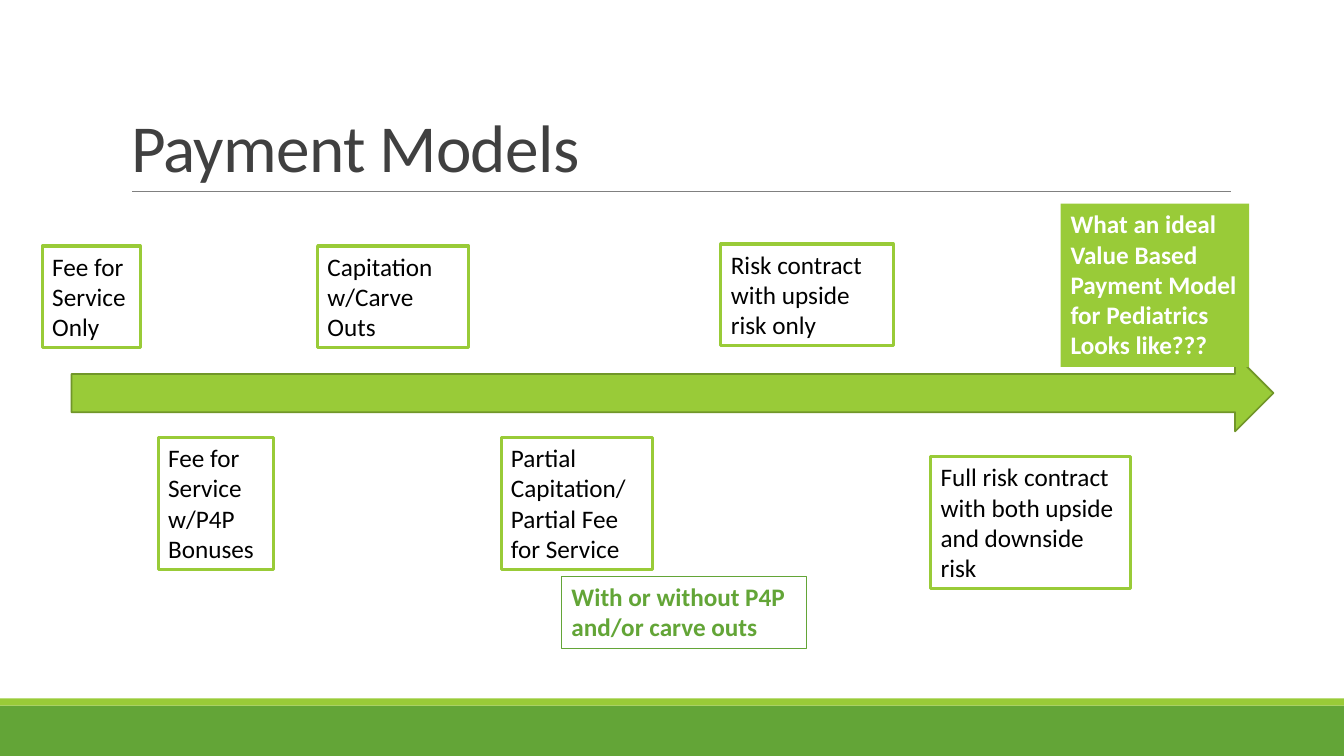
from dataclasses import dataclass

from lxml import etree
from pptx import Presentation
from pptx.dml.color import RGBColor
from pptx.enum.shapes import MSO_CONNECTOR, MSO_SHAPE
from pptx.enum.text import MSO_ANCHOR, MSO_AUTO_SIZE, PP_ALIGN
from pptx.oxml.ns import qn
from pptx.util import Inches, Pt

RECT, ARROW = MSO_SHAPE.RECTANGLE, MSO_SHAPE.RIGHT_ARROW
STRAIGHT = MSO_CONNECTOR.STRAIGHT
TOP, BOTTOM = MSO_ANCHOR.TOP, MSO_ANCHOR.BOTTOM
LEFT = PP_ALIGN.LEFT
GROW, NO_FIT = MSO_AUTO_SIZE.SHAPE_TO_FIT_TEXT, MSO_AUTO_SIZE.NONE

FONT = "Calibri"
COLORS = {
    "lime": "99CB38",
    "green": "63A537",
    "olive": "719629",
    "gray": "808080",
    "title": "404040",
    "black": "000000",
    "white": "FFFFFF",
}


@dataclass
class Box:
    left: float
    top: float
    width: float
    height: float
    fill: str | None = None
    line: str | None = None
    line_width: float = 2.25


@dataclass
class Model:
    box: Box
    text: str
    color: str = "black"
    bold: bool = False


def rgb(name: str) -> RGBColor:
    return RGBColor.from_string(COLORS[name])


def add_box(slide, box: Box, kind=RECT):
    shape = slide.shapes.add_shape(
        kind, Inches(box.left), Inches(box.top), Inches(box.width), Inches(box.height))
    shape.shadow.inherit = False
    if box.fill:
        shape.fill.solid()
        shape.fill.fore_color.rgb = rgb(box.fill)
    else:
        shape.fill.background()
    if box.line:
        shape.line.color.rgb = rgb(box.line)
        shape.line.width = Pt(box.line_width)
    else:
        shape.line.fill.background()
    return shape


def format_text(frame, size: float, color: str, bold: bool = False) -> None:
    for paragraph in frame.paragraphs:
        paragraph.alignment = LEFT
        for run in paragraph.runs:
            run.font.name = FONT
            run.font.size = Pt(size)
            run.font.bold = bold
            run.font.color.rgb = rgb(color)


def add_model(slide, model: Model) -> None:
    frame = add_box(slide, model.box).text_frame
    frame.text = model.text
    frame.word_wrap = True
    frame.auto_size = GROW
    frame.vertical_anchor = TOP
    format_text(frame, 18, model.color, model.bold)


def add_title(slide, text: str) -> None:
    title = slide.shapes.title
    title.left, title.top = Inches(1.2), Inches(0.31)
    title.width, title.height = Inches(11), Inches(1.59)
    frame = title.text_frame
    frame.text = text
    frame.word_wrap = True
    frame.auto_size = NO_FIT
    frame.vertical_anchor = BOTTOM
    format_text(frame, 48, "title")
    heading = frame.paragraphs[0]
    heading.line_spacing = 0.85
    # Tighter letter spacing, in hundredths of a point
    heading.runs[0]._r.get_or_add_rPr().set("spc", "-50")


def add_title_rule(slide) -> None:
    rule = slide.shapes.add_connector(
        STRAIGHT, Inches(1.31), Inches(1.9), Inches(12.21), Inches(1.9))
    rule.line.color.rgb = rgb("gray")
    rule.line.width = Pt(0.5)
    etree.SubElement(rule._element.spPr, qn("a:effectLst"))


def outlined(left: float, top: float, width: float, height: float) -> Box:
    return Box(left, top, width, height, line="lime")


FOOTER_BANDS = [
    Box(0, 7, 13.33, 0.5, fill="green"),
    Box(0, 6.93, 13.33, 0.07, fill="lime"),
]
RISK_ARROW = Box(0.71, 3.52, 11.92, 0.76, fill="lime", line="olive", line_width=1.25)
MODELS = [
    Model(outlined(0.42, 2.44, 0.97, 1.01), "Fee for Service Only"),
    Model(outlined(1.57, 4.34, 1.14, 1.31), "Fee for Service w/P4P Bonuses"),
    Model(outlined(3.15, 2.44, 1.5, 1.01), "Capitation w/Carve Outs"),
    Model(outlined(4.97, 4.34, 1.5, 1.31), "Partial Capitation/\nPartial Fee for Service"),
    Model(Box(5.57, 5.72, 2.43, 0.71, line="green", line_width=0.75),
          "With or without P4P and/or carve outs", "green", True),
    Model(outlined(7.15, 2.42, 1.71, 1.01), "Risk contract with upside risk only"),
    Model(outlined(9.23, 4.53, 1.98, 1.31),
          "Full risk contract with both upside and downside risk"),
    Model(Box(10.52, 2.02, 1.87, 1.62, fill="lime"),
          "What an ideal Value Based Payment Model for Pediatrics Looks like???",
          "white", True),
]


def main() -> None:
    prs = Presentation()
    prs.slide_width, prs.slide_height = Inches(13.33), Inches(7.5)
    slide = prs.slides.add_slide(prs.slide_layouts[5])

    # Footer bands and heading
    for band in FOOTER_BANDS:
        add_box(slide, band)
    add_title_rule(slide)
    add_title(slide, "Payment Models")

    # Arrow with the payment models along it
    add_box(slide, RISK_ARROW, ARROW)
    for model in MODELS:
        add_model(slide, model)

    prs.save("out.pptx")


if __name__ == "__main__":
    main()
